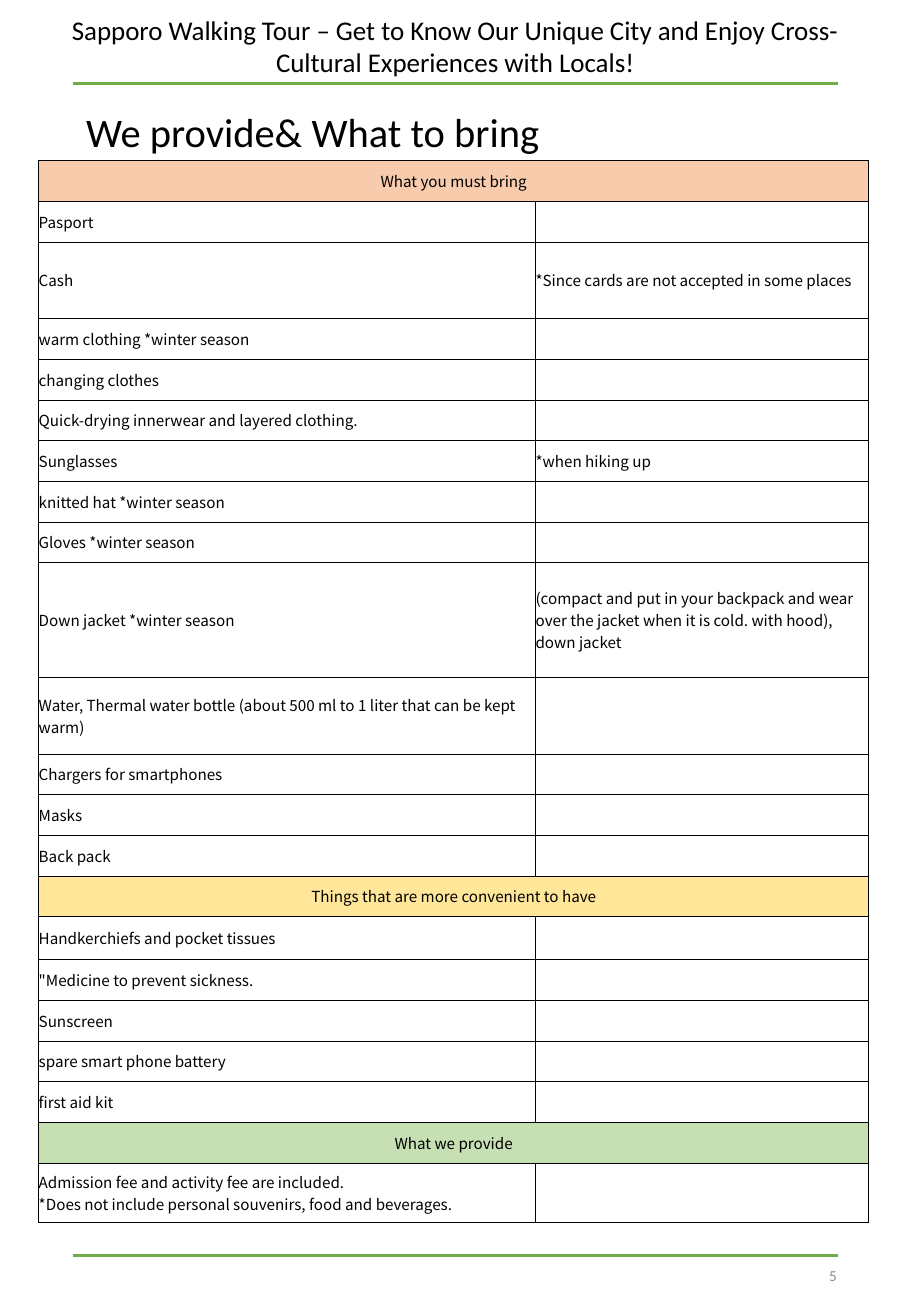
from dataclasses import dataclass

import lxml.etree
import pptx
import pptx.dml.color
import pptx.enum.shapes
import pptx.enum.text
import pptx.oxml
import pptx.oxml.ns
import pptx.util

Cm = pptx.util.Cm
Pt = pptx.util.Pt
Align = pptx.enum.text.PP_ALIGN
Anchor = pptx.enum.text.MSO_ANCHOR
qn = pptx.oxml.ns.qn

BLACK, GREEN = "000000", "70AD47"
LEFT, RIGHT = 1.52, 17.53


@dataclass
class Row:
    item: str
    note: str = ""
    high: float = 0.85
    fill: str = ""  # a filled row is a heading across both columns


@dataclass
class Label:
    text: str
    box: tuple[float, float, float, float]
    size: float
    align: Align = Align.LEFT
    anchor: Anchor = Anchor.MIDDLE
    color: str = BLACK
    fill: str = ""
    grow: bool = False


ROWS = [
    Row("What you must bring", fill="F8CBAD"),
    Row("Pasport"),
    Row("Cash", "*Since cards are not accepted in some places", 1.6),
    Row("warm clothing *winter season"),
    Row("changing clothes"),
    Row("Quick-drying innerwear and layered clothing."),
    Row("Sunglasses", "*when hiking up"),
    Row("knitted hat *winter season"),
    Row("Gloves *winter season"),
    Row("Down jacket *winter season",
        "(compact and put in your backpack and wear over the jacket "
        "when it is cold. with hood), down jacket", 2.4),
    Row("Water, Thermal water bottle (about 500 ml to 1 liter that can be kept warm)",
        high=1.6),
    Row("Chargers for smartphones"),
    Row("Masks"),
    Row("Back pack"),
    Row("Things that are more convenient to have", fill="FFE699"),
    Row("Handkerchiefs and pocket tissues", high=0.9),
    Row('"Medicine to prevent sickness.'),
    Row("Sunscreen"),
    Row("spare smart phone battery"),
    Row("first aid kit"),
    Row("What we provide", fill="C6E0B4"),
    Row("Admission fee and activity fee are included.\n"
        "*Does not include personal souvenirs, food and beverages.", high=1.25),
]
COLS = [10.39, 6.96]

LABELS = [
    Label("5", (13.46, 25.93, 4.29, 1.47), 9, Align.RIGHT, color="8C8C8C"),
    Label("We provide& What to bring", (1.55, 2.29, 16, 0.89), 24, fill="FFFFFF"),
    Label("Sapporo Walking Tour – Get to Know Our Unique City and Enjoy "
          "Cross-Cultural Experiences with Locals!",
          (0.53, 0.15, 17.98, 2.31), 16, Align.CENTER, Anchor.TOP, grow=True),
]
RULES = [26.24, 1.75]


def rgb(code: str) -> pptx.dml.color.RGBColor:
    return pptx.dml.color.RGBColor.from_string(code)


def style(frame, font: str, size: float, color: str, align: Align) -> None:
    for para in frame.paragraphs:
        para.alignment = align
        for run in para.runs:
            run.font.name = font
            run.font.size = Pt(size)
            run.font.color.rgb = rgb(color)


def draw_rule(slide, top: float) -> None:
    line = slide.shapes.add_connector(
        pptx.enum.shapes.MSO_CONNECTOR.STRAIGHT,
        Cm(LEFT), Cm(top), Cm(RIGHT), Cm(top))
    line.line.color.rgb = rgb(GREEN)
    line.line.width = Pt(1.5)
    lxml.etree.SubElement(line._element.spPr, qn("a:effectLst"))


def draw_label(slide, label: Label) -> None:
    box = [Cm(n) for n in label.box]
    if label.fill:
        shape = slide.shapes.add_shape(pptx.enum.shapes.MSO_SHAPE.RECTANGLE, *box)
        shape.shadow.inherit = False
        shape.fill.solid()
        shape.fill.fore_color.rgb = rgb(label.fill)
        shape.line.fill.background()
    else:
        shape = slide.shapes.add_textbox(*box)
    frame = shape.text_frame
    frame.word_wrap = True
    frame.vertical_anchor = label.anchor
    if label.grow:
        frame.auto_size = pptx.enum.text.MSO_AUTO_SIZE.SHAPE_TO_FIT_TEXT
    frame.text = label.text
    style(frame, "Calibri", label.size, label.color, label.align)


def frame_cell(cell) -> None:
    """Put a thin black border on all four sides."""
    props = cell._tc.get_or_add_tcPr()
    for side in ("a:lnL", "a:lnR", "a:lnT", "a:lnB"):
        edge = lxml.etree.SubElement(props, qn(side), w=str(Pt(0.5)))
        paint = lxml.etree.SubElement(edge, qn("a:solidFill"))
        lxml.etree.SubElement(paint, qn("a:srgbClr"), val=BLACK)


def fill_cell(cell, text: str, fill: str) -> None:
    cell.margin_left = cell.margin_right = cell.margin_top = cell.margin_bottom = 0
    cell.vertical_anchor = Anchor.MIDDLE
    frame_cell(cell)
    if fill:
        cell.fill.solid()
        cell.fill.fore_color.rgb = rgb(fill)
    else:
        cell.fill.background()
    if text:
        cell.text_frame.text = text
        style(cell.text_frame, "Noto Sans CJK JP", 9, BLACK,
              Align.CENTER if fill else Align.LEFT)


def draw_table(slide, rows: list[Row]) -> None:
    high = sum(row.high for row in rows)
    table = slide.shapes.add_table(
        len(rows), len(COLS), Cm(0.81), Cm(3.36), Cm(sum(COLS)), Cm(high)).table
    table.first_row = table.horz_banding = False
    for col, wide in zip(table.columns, COLS):
        col.width = Cm(wide)
    for i, row in enumerate(rows):
        table.rows[i].height = Cm(row.high)
        for j, text in enumerate((row.item, row.note)):
            fill_cell(table.cell(i, j), text, row.fill)
        if row.fill:
            table.cell(i, 0).merge(table.cell(i, 1))


def main() -> None:
    deck = pptx.Presentation()
    deck.slide_width, deck.slide_height = Cm(19.05), Cm(27.51)
    slide = deck.slides.add_slide(deck.slide_layouts[6])
    for top in RULES:
        draw_rule(slide, top)
    number, heading, title = LABELS
    draw_label(slide, number)
    draw_label(slide, heading)
    draw_table(slide, ROWS)
    draw_label(slide, title)
    deck.save("out.pptx")


if __name__ == "__main__":
    main()
